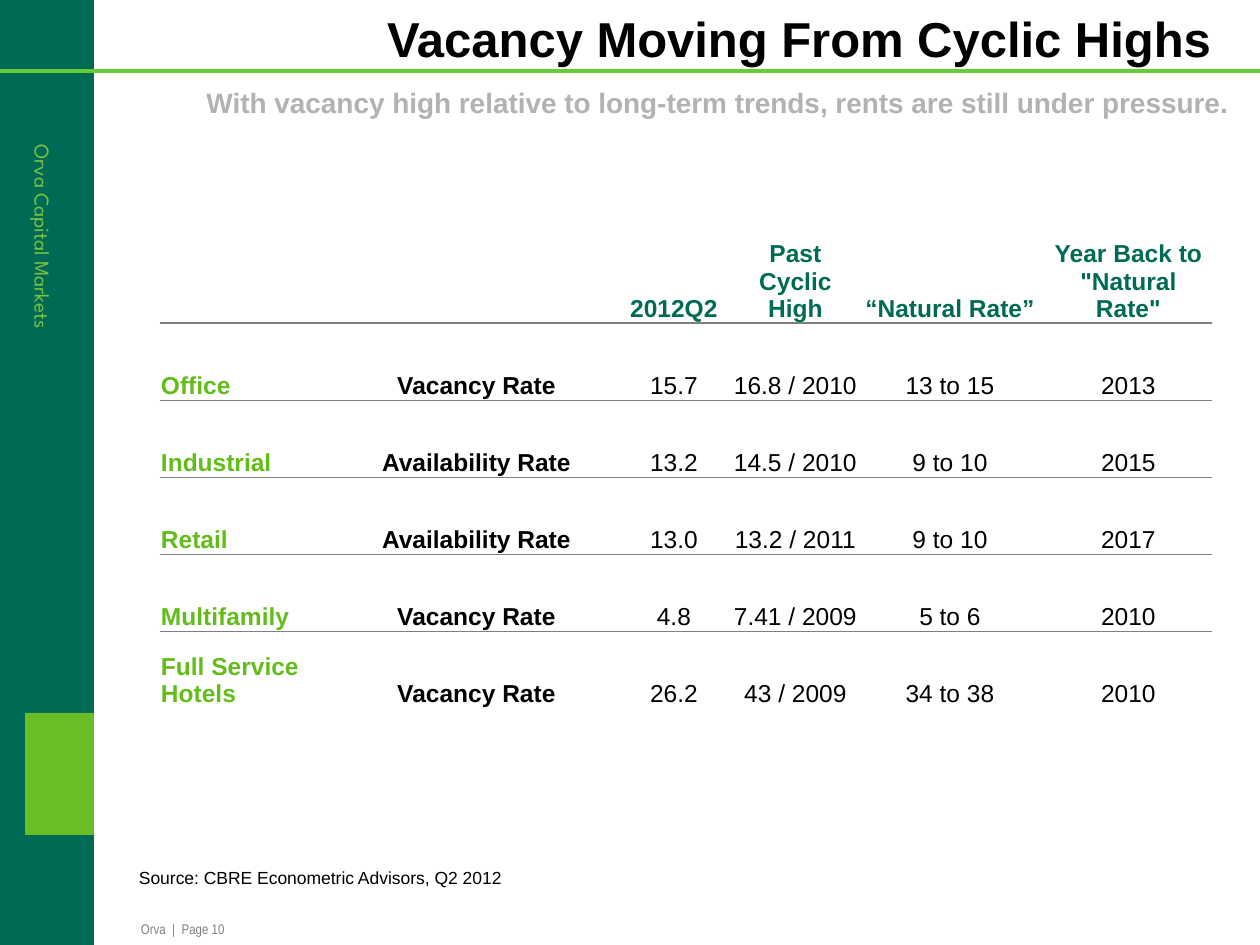
import dataclasses

import lxml.etree
import pptx
import pptx.dml.color
import pptx.enum.shapes
import pptx.enum.text
import pptx.oxml.ns
import pptx.util

SHAPE = pptx.enum.shapes.MSO_SHAPE
ALIGN = pptx.enum.text.PP_ALIGN
ANCHOR = pptx.enum.text.MSO_ANCHOR
BLANK_LAYOUT = 6


@dataclasses.dataclass(frozen=True)
class Theme:
    font: str = "Arial"
    narrow_font: str = "Arial Narrow"
    brand_font: str = "League Spartan"
    background: str = "FFFFFF"
    band: str = "006B54"
    band_text: str = "7AC142"
    emblem: str = "69BE28"
    rule: str = "66CC33"
    text: str = "000000"
    subtitle: str = "B2B2B2"
    footer: str = "808080"
    sector: str = "62BD19"
    grid: str = "7F7F7F"
    title_size: int = 28
    subtitle_size: int = 16
    table_size: int = 14
    brand_size: int = 12
    source_size: int = 10
    footer_size: int = 8
    rule_width: float = 2.25
    header_line: float = 1.5
    row_line: float = 0.5


THEME = Theme()

COLUMN_WIDTHS = [174, 285, 110, 133, 183, 167]
HEADER_HEIGHT = 90
ROW_HEIGHT = 77
VACANCY_ROWS = [
    ["", "", "2012Q2", "Past Cyclic High", "“Natural Rate” ", 'Year Back to "Natural Rate"'],
    ["Office", "Vacancy Rate", "15.7", "16.8 / 2010", "13 to 15 ", "2013"],
    ["Industrial", "Availability Rate", "13.2", "14.5 / 2010", "9 to 10 ", "2015"],
    ["Retail", "Availability Rate", "13.0", "13.2 / 2011", "9 to 10 ", "2017"],
    ["Multifamily", "Vacancy Rate", "4.8", "7.41 / 2009", "5 to 6 ", "2010"],
    ["Full Service Hotels", "Vacancy Rate", "26.2", "43 / 2009", "34 to 38 ", "2010"],
]


def px(length):
    return pptx.util.Emu(round(length * 914400 / 126))


def place(box):
    return [px(length) for length in box]


def color(value):
    return pptx.dml.color.RGBColor.from_string(value)


def apply_format(target, values):
    for name, value in values.items():
        setattr(target, name, value)


def write(frame, text, size, fill, bold=False, font=THEME.font, align=ALIGN.LEFT):
    paragraph = frame.paragraphs[0]
    paragraph.alignment = align
    run = paragraph.add_run()
    run.text = text
    apply_format(run.font, {"name": font, "size": pptx.util.Pt(size), "bold": bold})
    run.font.color.rgb = color(fill)


def add_label(slide, box, text, size, fill, margins=(0, 0, 0, 0), anchor=ANCHOR.TOP, wrap=True, **style):
    shape = slide.shapes.add_textbox(*place(box))
    left, top, right, bottom = place(margins)
    apply_format(shape.text_frame, {
        "margin_left": left, "margin_top": top, "margin_right": right, "margin_bottom": bottom,
        "vertical_anchor": anchor, "word_wrap": wrap,
    })
    write(shape.text_frame, text, size, fill, **style)
    return shape


def add_block(slide, box, fill):
    shape = slide.shapes.add_shape(SHAPE.RECTANGLE, *place(box))
    shape.shadow.inherit = False
    shape.fill.solid()
    shape.fill.fore_color.rgb = color(fill)
    shape.line.fill.background()


def add_side_band(slide, box):
    left, top, width, height = box
    add_block(slide, box, THEME.band)
    add_block(slide, (left + 25, top + 713, width - 25, 122), THEME.emblem)
    label = add_label(slide, (left - 48, top + 227, 186, 21), "Orva Capital Markets",
                      THEME.brand_size, THEME.band_text, font=THEME.brand_font, wrap=False)
    label.rotation = 90


def add_heading(slide, box):
    left, top, width, height = box
    rule_y = top + 71
    rule = slide.shapes.add_connector(pptx.enum.shapes.MSO_CONNECTOR.STRAIGHT,
                                      *place((left, rule_y, left + width, rule_y)))
    rule.line.color.rgb = color(THEME.rule)
    rule.line.width = pptx.util.Pt(THEME.rule_width)
    lxml.etree.SubElement(rule._element.spPr, pptx.oxml.ns.qn("a:effectLst"))
    style = {"anchor": ANCHOR.BOTTOM, "align": ALIGN.RIGHT, "bold": True}
    add_label(slide, (left + 141, top + 8, 1070, 59), "Vacancy Moving From Cyclic Highs",
              THEME.title_size, THEME.text, **style)
    add_label(slide, (left + 103, top + 79, 1126, 40),
              "With vacancy high relative to long-term trends, rents are still under pressure.",
              THEME.subtitle_size, THEME.subtitle, **style)


def add_border(cell, side, width):
    properties = cell._tc.get_or_add_tcPr()
    line = lxml.etree.SubElement(properties, pptx.oxml.ns.qn(f"a:ln{side}"))
    if not width:
        lxml.etree.SubElement(line, pptx.oxml.ns.qn("a:noFill"))
        return
    line.set("w", str(pptx.util.Pt(width)))
    fill = lxml.etree.SubElement(line, pptx.oxml.ns.qn("a:solidFill"))
    lxml.etree.SubElement(fill, pptx.oxml.ns.qn("a:srgbClr")).set("val", THEME.grid)


def cell_style(row, column):
    if row == 0:
        return {"fill": THEME.band, "bold": True, "align": ALIGN.CENTER}
    if column == 0:
        return {"fill": THEME.sector, "bold": True, "align": ALIGN.LEFT}
    return {"fill": THEME.text, "bold": column == 1, "align": ALIGN.CENTER}


def add_vacancy_table(slide, box):
    row_count = len(VACANCY_ROWS)
    table = slide.shapes.add_table(row_count, len(COLUMN_WIDTHS), *place(box)).table
    apply_format(table, {"first_row": False, "horz_banding": False})
    for column, width in zip(table.columns, COLUMN_WIDTHS):
        column.width = px(width)
    line_widths = [0, THEME.header_line] + [THEME.row_line] * (row_count - 2) + [0]
    for row, values in enumerate(VACANCY_ROWS):
        table.rows[row].height = px(ROW_HEIGHT if row else HEADER_HEIGHT)
        for column, text in enumerate(values):
            cell = table.cell(row, column)
            apply_format(cell, {
                "margin_left": px(1), "margin_top": px(1), "margin_right": px(1),
                "margin_bottom": px(0), "vertical_anchor": ANCHOR.BOTTOM,
            })
            borders = {"L": 0, "R": 0, "T": line_widths[row], "B": line_widths[row + 1]}
            for side, width in borders.items():
                add_border(cell, side, width)
            cell.fill.background()
            if text:
                write(cell.text_frame, text, THEME.table_size, **cell_style(row, column))


def add_footer(slide, box):
    left, top, width, height = box
    add_label(slide, (left, top, width, 34), "Source: CBRE Econometric Advisors, Q2 2012",
              THEME.source_size, THEME.text, margins=(13, 6, 13, 6))
    add_label(slide, (left + 15, top + 60, 186, 21), "Orva  |  Page 10",
              THEME.footer_size, THEME.footer, font=THEME.narrow_font, wrap=False)


def main():
    presentation = pptx.Presentation()
    apply_format(presentation, {"slide_width": px(1260), "slide_height": px(945)})
    slide = presentation.slides.add_slide(presentation.slide_layouts[BLANK_LAYOUT])
    slide.background.fill.solid()
    slide.background.fill.fore_color.rgb = color(THEME.background)
    add_side_band(slide, (0, 0, 94, 945))
    add_heading(slide, (0, 0, 1260, 119))
    table_height = HEADER_HEIGHT + ROW_HEIGHT * (len(VACANCY_ROWS) - 1)
    add_vacancy_table(slide, (160, 233, sum(COLUMN_WIDTHS), table_height))
    add_footer(slide, (126, 861, 655, 84))
    presentation.save("out.pptx")


if __name__ == "__main__":
    main()
